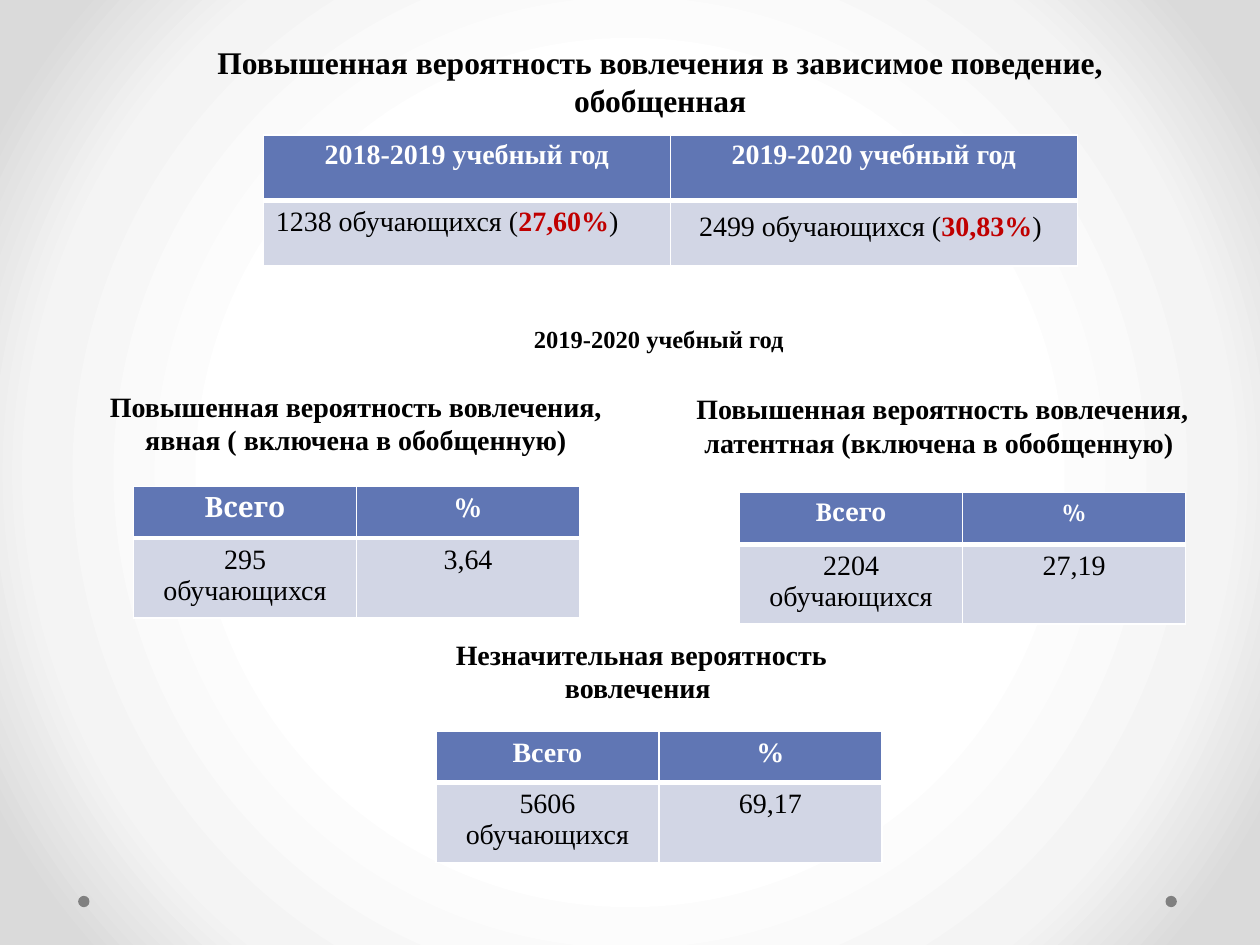
from lxml.etree import SubElement
from pptx import Presentation
from pptx.dml.color import RGBColor
from pptx.enum.shapes import MSO_SHAPE as Shape
from pptx.enum.text import MSO_ANCHOR as Anchor, MSO_AUTO_SIZE as Fit, PP_ALIGN as Align
from pptx.oxml import parse_xml
from pptx.oxml.ns import nsdecls, qn
from pptx.util import Inches, Pt

COLORS = {"text": "000000", "white": "FFFFFF", "head": "6076B4", "body": "D2D6E5",
          "accent": "C00000", "dot": "808080", "pale": "F4F4F4", "edge": "DADADA"}
SERIF = "Times New Roman"
HEAD_FONT = "Cambria"


def rgb(name):
    return RGBColor.from_string(COLORS[name])


def style(font, size, color="text", bold=True, name=SERIF):
    font.name, font.size, font.bold = name, Pt(size), bold
    font.color.rgb = rgb(color)


def set_back(slide):
    """Radial gradient, white in the middle."""
    slide.background.fill.solid()
    props = slide.background._cSld.bg.bgPr
    stops = "".join(f'<a:gs pos="{pos}000"><a:srgbClr val="{COLORS[name]}"/></a:gs>'
                    for pos, name in ((50, "white"), (76, "pale"), (92, "edge")))
    grad = parse_xml(f'<a:gradFill {nsdecls("a")} rotWithShape="1"><a:gsLst>{stops}</a:gsLst>'
                     '<a:path path="circle"><a:fillToRect l="50000" t="50000" r="50000" '
                     'b="50000"/></a:path></a:gradFill>')
    props.replace(props[0], grad)


def add_dot(slide, left):
    dot = slide.shapes.add_shape(Shape.OVAL, Inches(left), Inches(7.11),
                                 Inches(0.09), Inches(0.09))
    dot.shadow.inherit = False
    dot.fill.solid()
    dot.fill.fore_color.rgb = rgb("dot")
    dot.line.fill.background()


def set_title(slide, text):
    title = slide.shapes.title
    title.left, title.top = Inches(1.54), Inches(0.29)
    title.width, title.height = Inches(7.4), Inches(0.71)
    frame = title.text_frame
    frame.text = text
    frame.auto_size = Fit.NONE
    frame.vertical_anchor = Anchor.TOP
    para = frame.paragraphs[0]
    para.alignment = Align.CENTER
    style(para.font, 18)


def add_label(slide, box, lines, size=16, wrap=True, space=None):
    frame = slide.shapes.add_textbox(*map(Inches, box)).text_frame
    frame.word_wrap = wrap
    frame.text = "\n".join(lines)
    for para in frame.paragraphs:
        para.alignment = Align.CENTER
        para.line_spacing = space
        style(para.font, size)


def set_edges(cell, top, bottom):
    props = cell._tc.get_or_add_tcPr()
    for i, (side, width) in enumerate((("L", 1), ("R", 1), ("T", top), ("B", bottom))):
        line = parse_xml(f'<a:ln{side} {nsdecls("a")} w="{Pt(width)}"/>')
        fill = SubElement(line, qn("a:solidFill"))
        SubElement(fill, qn("a:srgbClr"), val=COLORS["white"])
        props.insert(i, line)


def add_grid(slide, left, top, width, heights, rows, font=SERIF, size=16):
    """Two-row table: a header and a line of values; returns the table."""
    table = slide.shapes.add_table(2, 2, Inches(left), Inches(top), Inches(width),
                                   Inches(sum(heights))).table
    for r, (height, texts) in enumerate(zip(heights, rows)):
        table.rows[r].height = Inches(height)
        for c, text in enumerate(texts):
            cell = table.cell(r, c)
            cell.fill.solid()
            cell.fill.fore_color.rgb = rgb("body" if r else "head")
            set_edges(cell, *((3, 1) if r else (1, 3)))
            para = cell.text_frame.paragraphs[0]
            para.text = text
            para.alignment = Align.CENTER
            if r:
                style(para.font, 16, bold=False)
            else:
                style(para.font, size, "white", name=font)
    return table


def add_years(slide):
    """Comparison of two school years with marked shares."""
    years = ("2018-2019 учебный год", "2019-2020 учебный год")
    counts = ("1238 обучающихся (", "2499 обучающихся (")
    table = add_grid(slide, 2.09, 1.07, 6.46, (0.52, 0.52), (years, counts))
    for c, (share, tail) in enumerate((("27,60%", ")"), ("30,83%", ") "))):
        head = table.cell(0, c)
        head.margin_left = head.margin_right = Inches(0.07)
        head.margin_top = head.margin_bottom = 0
        head.text_frame.paragraphs[0].line_spacing = 1.15
        para = table.cell(1, c).text_frame.paragraphs[0]
        mark = para.add_run()
        mark.text = share
        mark.font.bold = True
        mark.font.color.rgb = rgb("accent")
        para.add_run().text = tail
    table.cell(1, 0).text_frame.paragraphs[0].alignment = Align.LEFT
    table.cell(1, 1).text_frame.paragraphs[0].line_spacing = 1.15


def main():
    prs = Presentation()
    prs.slide_width, prs.slide_height = Inches(10), Inches(7.5)
    slide = prs.slides.add_slide(prs.slide_layouts[5])
    set_back(slide)
    for left in (9.25, 0.62):
        add_dot(slide, left)

    # Overall figures
    set_title(slide, "Повышенная вероятность вовлечения в зависимое поведение, обобщенная")
    add_years(slide)

    # Headings of the groups
    add_label(slide, (4.13, 2.49, 2.2, 0.35), ["2019-2020 учебный год"], 14, False, 1.15)
    add_label(slide, (0.56, 3.04, 4.53, 0.64),
              ["Повышенная вероятность вовлечения,", "явная ( включена в обобщенную)"])
    add_label(slide, (5.31, 3.06, 4.34, 0.64),
              ["Повышенная вероятность вовлечения,\vлатентная (включена в обобщенную) "])
    add_label(slide, (3.09, 5.01, 4, 0.64), ["Незначительная вероятность вовлечения "])

    # Tables of the groups
    for left, top, count, share, font, size in (
            (1.06, 3.86, 295, "3,64", HEAD_FONT, 16),
            (5.87, 3.91, 2204, "27,19", HEAD_FONT, 14),
            (3.46, 5.8, 5606, "69,17", SERIF, 16)):
        add_grid(slide, left, top, 3.54, (0.41, 0.63),
                 (("Всего", "%"), (f"{count} обучающихся", share)), font, size)

    prs.save("out.pptx")


if __name__ == "__main__":
    main()
